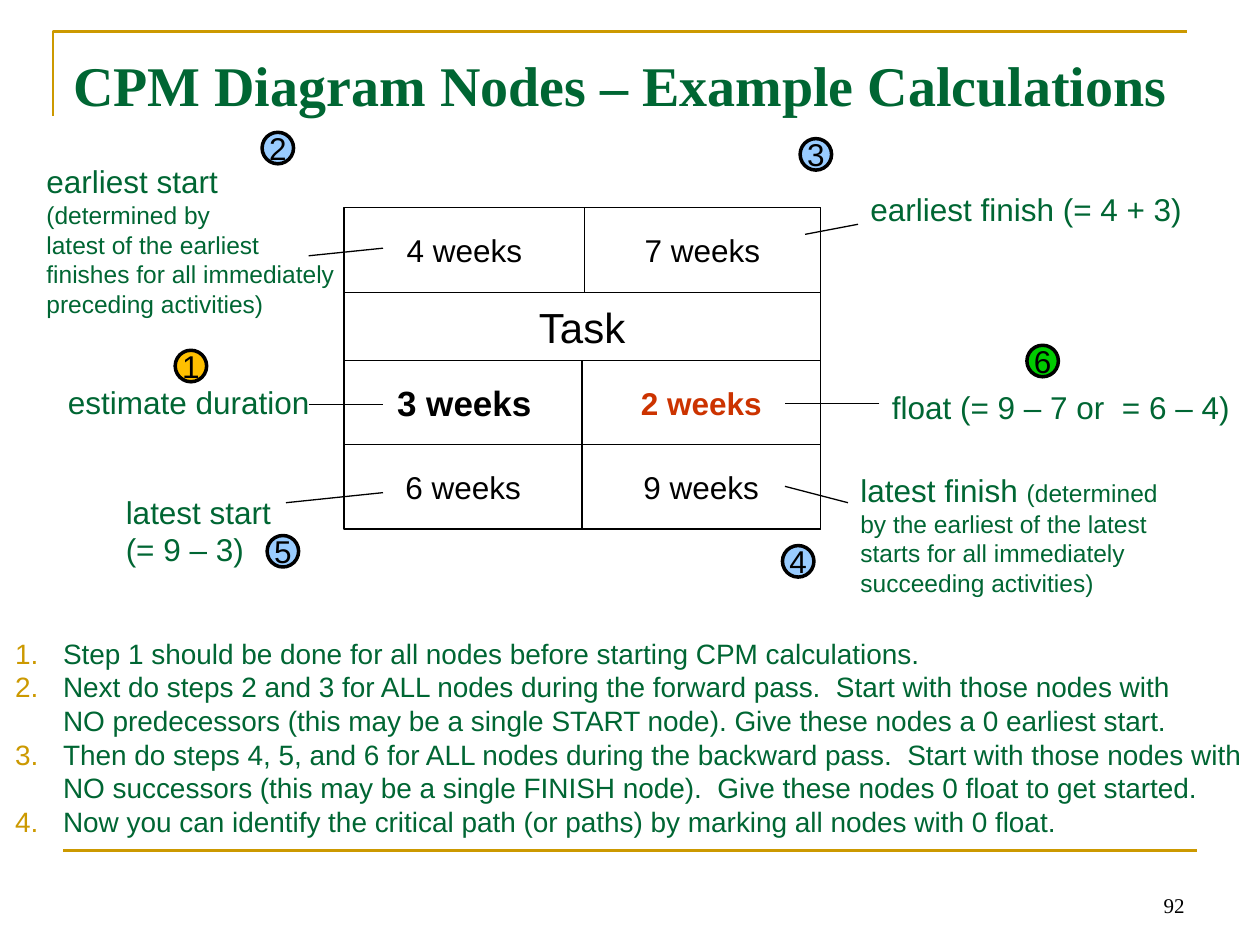
from copy import deepcopy
from typing import NamedTuple

from lxml.etree import SubElement
from pptx import Presentation
from pptx.dml.color import RGBColor
from pptx.enum.shapes import MSO_CONNECTOR, MSO_SHAPE
from pptx.enum.text import MSO_ANCHOR, MSO_AUTO_SIZE, PP_ALIGN
from pptx.oxml.ns import qn
from pptx.util import Inches, Pt

GREEN = RGBColor(0x00, 0x66, 0x33)
GOLD = RGBColor(0xCC, 0x99, 0x00)
BLACK = RGBColor(0x00, 0x00, 0x00)
WHITE = RGBColor(0xFF, 0xFF, 0xFF)
RED = RGBColor(0xCC, 0x33, 0x00)
BLUE = RGBColor(0x99, 0xCC, 0xFF)
AMBER = RGBColor(0xFF, 0xC0, 0x00)
LIME = RGBColor(0x00, 0xCC, 0x00)

SANS, SERIF = "Arial", "Times New Roman"
BIG, SMALL = 18, 14
LEFT, RIGHT = 2.73, 6.51            # outer edges of the node
ROWS = (1.65, 2.32, 2.86, 3.53, 4.2)  # row edges of the node
BADGE = 0.25


class Cell(NamedTuple):
    text: str
    row: int
    x1: float
    x2: float
    size: int = BIG
    bold: bool = False
    color: RGBColor = BLACK


class Label(NamedTuple):
    """Each line is a tuple of (text, size) runs."""
    x: float
    y: float
    w: float
    h: float
    lines: tuple


class Badge(NamedTuple):
    number: int
    x: float
    y: float
    fill: RGBColor


CELLS = (
    Cell("Task", 1, LEFT, RIGHT, 24),
    Cell("4 weeks", 0, LEFT, 4.64),
    Cell("7 weeks", 0, 4.64, RIGHT),
    Cell("3 weeks", 2, LEFT, 4.64, 20, True),
    Cell("2 weeks", 2, 4.62, RIGHT, BIG, True, RED),
    Cell("6 weeks", 3, LEFT, 4.62),
    Cell("9 weeks", 3, 4.62, RIGHT),
)
LABELS = (
    Label(0.44, 2.99, 2.16, 0.4, ((("estimate duration", BIG),),)),
    Label(6.98, 3.03, 2.88, 0.4, ((("float (= 9 – 7 or  = 6 – 4)", BIG),),)),
    Label(0.27, 1.24, 2.5, 1.35, (
        (("earliest start", BIG),),
        (("(determined by", SMALL),),
        (("latest of the earliest", SMALL),),
        (("finishes for all immediately", SMALL),),
        (("preceding activities)", SMALL),))),
    Label(0.9, 3.86, 1.37, 0.71, ((("latest start", BIG),), (("(= 9 – 3)", BIG),))),
    Label(6.81, 1.46, 2.7, 0.4, ((("earliest finish (= 4 + 3)", BIG),),)),
    Label(6.73, 3.69, 2.58, 1.11, (
        (("latest finish ", BIG), ("(determined", SMALL)),
        (("by the earliest of the latest \vstarts for all immediately", SMALL),),
        (("succeeding activities)", SMALL),))),
)
POINTERS = (
    (2.45, 3.21, 3.04, 3.21), (6.98, 3.2, 6.23, 3.2), (3.04, 1.97, 2.45, 2.03),
    (3.04, 3.91, 2.27, 3.99), (6.81, 1.78, 6.39, 1.86), (6.73, 3.99, 6.23, 3.86),
)
BADGES = (
    Badge(1, 1.39, 2.78, AMBER), Badge(2, 2.08, 1.05, BLUE), Badge(3, 6.35, 1.1, BLUE),
    Badge(4, 6.21, 4.33, BLUE), Badge(5, 2.12, 4.25, BLUE), Badge(6, 8.15, 2.74, LIME),
)
STEPS = (
    "Step 1 should be done for all nodes before starting CPM calculations.",
    "Next do steps 2 and 3 for ALL nodes during the forward pass.  Start with those nodes with\v"
    "NO predecessors (this may be a single START node). Give these nodes a 0 earliest start.",
    "Then do steps 4, 5, and 6 for ALL nodes during the backward pass.  Start with those nodes with \v"
    "NO successors (this may be a single FINISH node).  Give these nodes 0 float to get started.",
    "Now you can identify the critical path (or paths) by marking all nodes with 0 float.",
)


def style(p, size: float, color: RGBColor, font: str = SANS, bold: bool = False) -> None:
    """Format all runs of a paragraph, and its line breaks to match."""
    for r in p.runs:
        r.font.size, r.font.name, r.font.bold = Pt(size), font, bold
        r.font.color.rgb = color
    for br in p._p.findall(qn("a:br")):
        br.insert(0, deepcopy(p.runs[0]._r.rPr))


def place(sp, x: float, y: float, w: float, h: float) -> None:
    sp.left, sp.top, sp.width, sp.height = (Inches(v) for v in (x, y, w, h))


def add_box(s, kind, x: float, y: float, w: float, h: float, fill=WHITE, line: float = 0.75):
    sp = s.shapes.add_shape(kind, *(Inches(v) for v in (x, y, w, h)))
    sp.shadow.inherit = False
    sp.fill.solid()
    sp.fill.fore_color.rgb = fill
    sp.line.color.rgb, sp.line.width = BLACK, Pt(line)
    return sp


def center_text(sp, text: str, size: int, color=BLACK, bold: bool = False) -> None:
    tf = sp.text_frame
    tf.text, tf.word_wrap, tf.vertical_anchor = text, False, MSO_ANCHOR.MIDDLE
    p = tf.paragraphs[0]
    p.alignment = PP_ALIGN.CENTER
    style(p, size, color, bold=bold)


def add_line(s, ends: tuple, color=BLACK, width: float = 0.75) -> None:
    c = s.shapes.add_connector(MSO_CONNECTOR.STRAIGHT, *(Inches(v) for v in ends))
    c.line.color.rgb, c.line.width = color, Pt(width)
    SubElement(c._element.spPr, qn("a:effectLst"))


def add_label(s, label: Label) -> None:
    sp = s.shapes.add_textbox(*(Inches(v) for v in label[:4]))
    tf = sp.text_frame
    tf.word_wrap, tf.auto_size = False, MSO_AUTO_SIZE.SHAPE_TO_FIT_TEXT
    tf.text = "\n".join(line[0][0] for line in label.lines)
    for p, line in zip(tf.paragraphs, label.lines):
        for text, _ in line[1:]:
            p.add_run().text = text
        style(p, line[0][1], GREEN)
        for r, (_, size) in zip(p.runs, line * len(p.runs)):
            r.font.size = Pt(size)


def add_frame(s) -> None:
    fb = s.shapes.build_freeform(Inches(0.42), Inches(0.92))
    fb.add_line_segments([(Inches(0.42), Inches(0.25)), (Inches(9.42), Inches(0.25))], close=False)
    sp = fb.convert_to_shape()
    sp.shadow.inherit = False
    sp.fill.background()
    sp.line.color.rgb, sp.line.width = GOLD, Pt(1.5)
    add_line(s, (0.5, 6.75, 9.5, 6.75), GOLD, 1.5)


def fill_title(sp) -> None:
    place(sp, 0.48, 0.33, 9.03, 0.67)
    tf = sp.text_frame
    tf.text, tf.vertical_anchor = "CPM Diagram Nodes – Example Calculations", MSO_ANCHOR.MIDDLE
    tf.auto_size = MSO_AUTO_SIZE.NONE
    tf.paragraphs[0].alignment = PP_ALIGN.LEFT
    style(tf.paragraphs[0], 32, GREEN, SERIF, True)


def fill_steps(sp) -> None:
    place(sp, 0.02, 5, 10.17, 1.72)
    tf = sp.text_frame
    tf.word_wrap, tf.auto_size = False, MSO_AUTO_SIZE.SHAPE_TO_FIT_TEXT
    tf.text = "\n".join(STEPS)
    for p in tf.paragraphs:
        p.space_before = Pt(0)
        style(p, 16, GREEN)
        pPr = p._p.get_or_add_pPr()
        pPr.set("marL", str(Inches(0.38)))
        pPr.set("indent", str(-Inches(0.38)))
        SubElement(SubElement(pPr, qn("a:buClr")), qn("a:srgbClr"), val=str(GOLD))
        SubElement(pPr, qn("a:buFont"), typeface=SANS)
        SubElement(pPr, qn("a:buAutoNum"), type="arabicPeriod")


def add_page_number(s) -> None:
    sp = s.shapes.add_textbox(*(Inches(v) for v in (7.17, 6.83, 2.33, 0.5)))
    tf = sp.text_frame
    tf.text, tf.word_wrap, tf.vertical_anchor = "92", True, MSO_ANCHOR.BOTTOM
    tf.paragraphs[0].alignment = PP_ALIGN.RIGHT
    style(tf.paragraphs[0], 12, BLACK, SERIF)


def main() -> None:
    prs = Presentation()
    prs.slide_width, prs.slide_height = Inches(10), Inches(7.5)
    s = prs.slides.add_slide(prs.slide_layouts[1])
    add_frame(s)
    add_page_number(s)
    fill_title(s.shapes.title)
    fill_steps(s.placeholders[1])
    add_box(s, MSO_SHAPE.RECTANGLE, 2.75, ROWS[0], 3.76, ROWS[-1] - ROWS[0])
    for c in CELLS:
        top, bottom = ROWS[c.row:c.row + 2]
        sp = add_box(s, MSO_SHAPE.RECTANGLE, c.x1, top, c.x2 - c.x1, bottom - top)
        center_text(sp, c.text, c.size, c.color, c.bold)
    for label in LABELS:
        add_label(s, label)
    for ends in POINTERS:
        add_line(s, ends)
    for b in BADGES:
        sp = add_box(s, MSO_SHAPE.OVAL, b.x, b.y, BADGE, BADGE, b.fill, 2)
        center_text(sp, str(b.number), BIG)
    prs.save("out.pptx")


if __name__ == "__main__":
    main()
